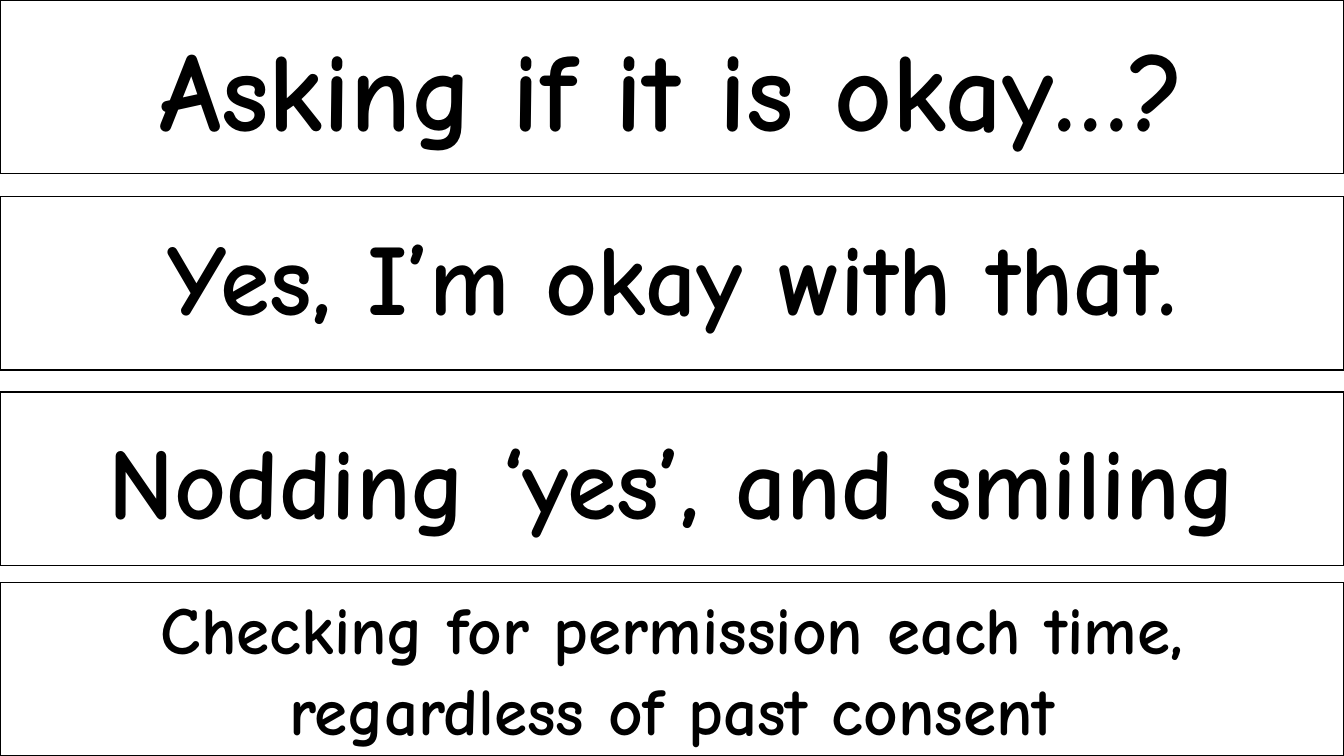
from dataclasses import dataclass

from pptx import Presentation
from pptx.dml.color import RGBColor
from pptx.enum.shapes import MSO_SHAPE as Shape
from pptx.enum.text import MSO_AUTO_SIZE as Fit, PP_ALIGN as Align
from pptx.slide import Slide
from pptx.util import Inches, Pt

BLACK = RGBColor(0, 0, 0)
WHITE = RGBColor(255, 255, 255)
WIDE, HIGH = 13.33, 7.5
CARD = 1.72  # height of every card


@dataclass
class Card:
    top: float
    text: str
    left: float
    drop: float  # from the card's top edge to the text box
    high: float
    size: int


CARDS = [
    Card(0, "Asking if it is okay…?", 0.22, 0.14, 1.45, 80),
    Card(1.95, "Yes, I’m okay with that.", 0, 0.13, 1.31, 72),
    Card(3.89, "Nodding ‘yes’, and smiling", 0.22, 0.21, 1.31, 72),
    Card(HIGH - CARD, "Checking for permission each time, regardless of past consent",
         0.22, 0, 1.72, 48),
]


def draw_box(slide: Slide, card: Card) -> None:
    box = slide.shapes.add_shape(
        Shape.RECTANGLE, 0, Inches(card.top), Inches(WIDE), Inches(CARD))
    box.shadow.inherit = False
    box.fill.solid()
    box.fill.fore_color.rgb = WHITE
    box.line.color.rgb = BLACK
    box.line.width = Pt(1)


def draw_text(slide: Slide, card: Card) -> None:
    box = slide.shapes.add_textbox(
        Inches(card.left), Inches(card.top + card.drop),
        Inches(WIDE - 2 * card.left), Inches(card.high))
    frame = box.text_frame
    frame.word_wrap = True
    frame.auto_size = Fit.SHAPE_TO_FIT_TEXT
    para = frame.paragraphs[0]
    para.alignment = Align.CENTER
    run = para.add_run()
    run.text = card.text
    style = {"name": "Comic Neue", "size": Pt(card.size), "bold": True}
    for key, value in style.items():
        setattr(run.font, key, value)
    run.font.color.rgb = BLACK


def main() -> None:
    deck = Presentation()
    deck.slide_width, deck.slide_height = Inches(WIDE), Inches(HIGH)
    slide = deck.slides.add_slide(deck.slide_layouts[6])

    # Outlined cards, then their wording on top
    for draw in (draw_box, draw_text):
        for card in CARDS:
            draw(slide, card)

    deck.save("out.pptx")


if __name__ == "__main__":
    main()
